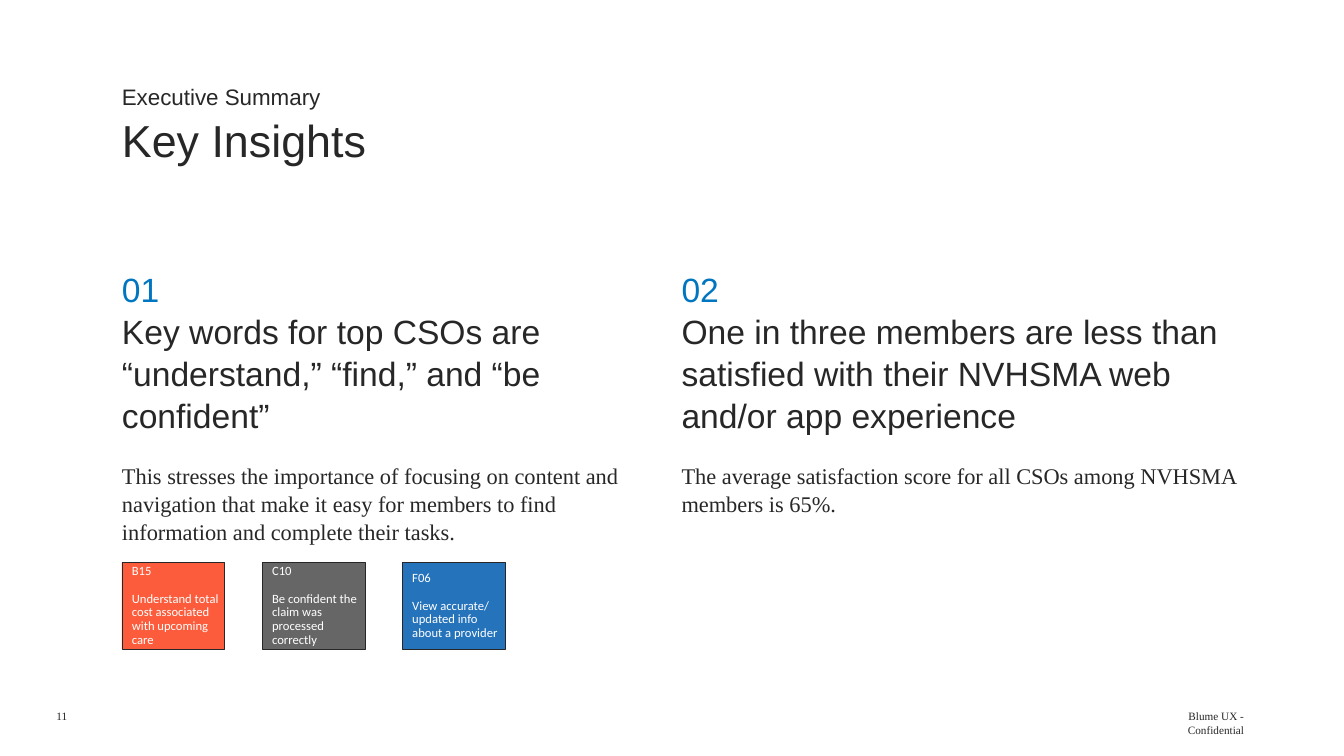
from dataclasses import dataclass

from lxml.etree import SubElement as add_node
from pptx import Presentation as Deck
from pptx.dml.color import RGBColor as Rgb
from pptx.enum.shapes import MSO_SHAPE as Kind
from pptx.enum.text import MSO_ANCHOR as Anchor
from pptx.enum.text import MSO_AUTO_SIZE as Fit
from pptx.enum.text import PP_ALIGN as Align
from pptx.oxml.ns import qn
from pptx.util import Emu, Pt

SCALE = 9144  # EMU in one px, 100 px to the inch


@dataclass(frozen=True)
class Theme:
    ink: str = "272727"
    blue: str = "0076C1"
    white: str = "FFFFFF"
    coral: str = "FC5C3B"
    gray: str = "666666"
    azure: str = "2573BB"
    sans: str = "Arial"
    serif: str = "Times New Roman"
    label: str = "Calibri"
    title: int = 32
    head: int = 24
    body: int = 16
    card: int = 9
    foot: int = 8


T = Theme()


def px(n):
    return Emu(n * SCALE)


def place(shape, box):
    shape.left, shape.top, shape.width, shape.height = map(px, box)


def setup(frame, inset, anchor=Anchor.TOP):
    """Set the margins (left, top, right, bottom) and anchor of a frame."""
    frame.word_wrap = True
    frame.auto_size = Fit.NONE
    frame.vertical_anchor = anchor
    (frame.margin_left, frame.margin_top,
     frame.margin_right, frame.margin_bottom) = map(px, inset)


def write(frame, lines, pitch=1.04, align=Align.LEFT):
    """Fill a frame from rows of (text, size, font, colour, space before)."""
    for i, (text, size, font, color, gap) in enumerate(lines):
        para = frame.add_paragraph() if i else frame.paragraphs[0]
        para.alignment = align
        para.line_spacing = pitch
        para.space_before, para.space_after = Pt(gap), Pt(0)
        run = para.add_run()
        run.text = text
        run.font.size, run.font.name = Pt(size), font
        run.font.color.rgb = Rgb.from_string(color)


def plain(frame):
    """Take bullets and indents off a list."""
    for para in frame.paragraphs:
        props = para._p.get_or_add_pPr()
        props.set("marL", "0")
        props.set("indent", "0")
        add_node(props, qn("a:buNone"))


def add_text(slide, box, line, inset=(0, 0, 0, 0), pitch=1.0, align=Align.LEFT):
    shape = slide.shapes.add_textbox(*map(px, box))
    setup(shape.text_frame, inset)
    write(shape.text_frame, [line], pitch, align)


def fill_title(slide, text):
    shape = slide.shapes.title
    place(shape, (111, 106, 1109, 64))
    setup(shape.text_frame, (10, 5, 10, 5), Anchor.BOTTOM)
    write(shape.text_frame, [(text, T.title, T.sans, T.ink, 0)])


def fill_point(shape, box, code, head, body):
    place(shape, box)
    frame = shape.text_frame
    setup(frame, (10, 5, 10, 5))
    write(frame, [
        (code, T.head, T.sans, T.blue, 0),
        (head, T.head, T.sans, T.ink, 0),
        (body, T.body, T.serif, T.ink, 19),
    ])
    plain(frame)


def add_card(slide, left, fill, code, text):
    shape = slide.shapes.add_shape(Kind.RECTANGLE, *map(px, (left, 558, 102, 86)))
    shape.shadow.inherit = False
    shape.fill.solid()
    shape.fill.fore_color.rgb = Rgb.from_string(fill)
    shape.line.color.rgb = Rgb.from_string(T.ink)
    shape.line.width = Pt(0.5)
    setup(shape.text_frame, (10, 6, 6, 6), Anchor.MIDDLE)
    write(shape.text_frame, [
        (code, T.card, T.label, T.white, 0),
        (text, T.card, T.label, T.white, 10),
    ], 0.9)


def main():
    deck = Deck()
    deck.slide_width, deck.slide_height = px(1333), px(750)
    slide = deck.slides.add_slide(deck.slide_layouts[3])

    # Heading
    add_text(slide, (111, 77, 389, 37),
             ("Executive Summary", T.body, T.sans, T.ink, 0),
             (10, 5, 10, 5), 1.04)
    fill_title(slide, "Key Insights")

    # Two insights
    hold = slide.placeholders
    fill_point(
        hold[1], (111, 260, 513, 279), "01",
        "Key words for top CSOs are “understand,” “find,” and “be confident”",
        "This stresses the importance of focusing on content and navigation "
        "that make it easy for members to find information and complete "
        "their tasks.")
    fill_point(
        hold[2], (666, 260, 572, 252), "02",
        "One in three members are less than satisfied with their NVHSMA web "
        "and/or app experience",
        "The average satisfaction score for all CSOs among NVHSMA members "
        "is 65%.")

    # Cards
    cards = [
        (T.coral, "B15", "Understand total cost associated with upcoming care"),
        (T.gray, "C10", "Be confident the claim was processed correctly"),
        (T.azure, "F06", "View accurate/ updated info about a provider"),
    ]
    for i, card in enumerate(cards):
        add_card(slide, 121 + 139 * i, *card)

    # Footer
    add_text(slide, (56, 704, 20, 13), ("11", T.foot, T.serif, T.ink, 0))
    add_text(slide, (1168, 704, 66, 26),
             ("Blume UX - Confidential", T.foot, T.serif, T.ink, 0),
             align=Align.RIGHT)

    deck.save("out.pptx")


if __name__ == "__main__":
    main()
